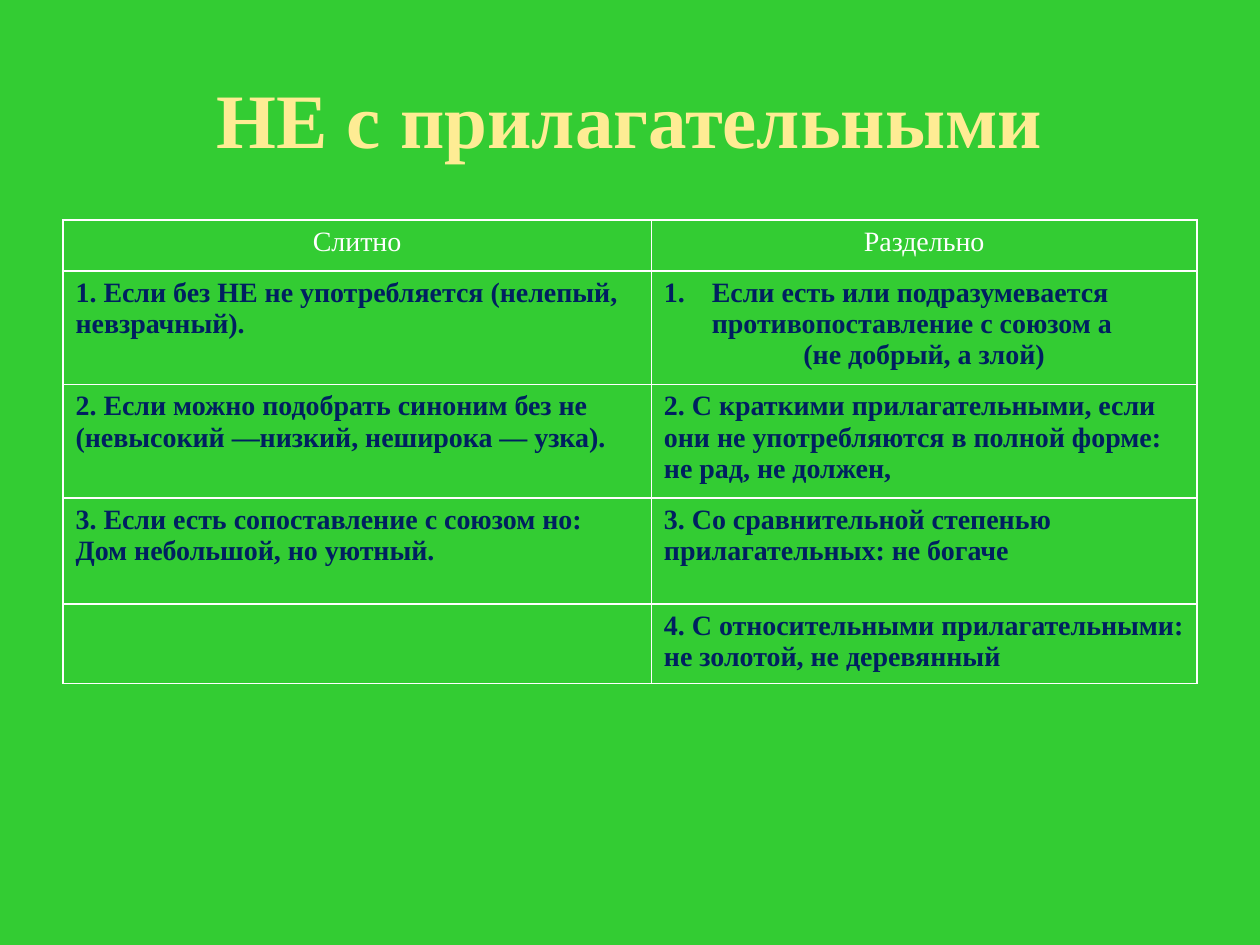
"""Builds a slide on writing НЕ with adjectives, joined or separate."""
import dataclasses

import pptx
import pptx.dml.color
import pptx.enum.text
import pptx.oxml
import pptx.oxml.ns
import pptx.util

ALIGN = pptx.enum.text.PP_ALIGN
COLUMN_SHARES = (0.467, 0.433)
ROW_SHARES = (0.054, 0.112, 0.112, 0.112, 0.079)
HEADINGS = ("Слитно", "Раздельно")
CONTRAST = {"left": 0.38, "hanging": -0.38}
RULES = (
    (
        [("1. Если без НЕ не употребляется (нелепый, невзрачный).", {})],
        [
            ("Если есть или подразумевается противопоставление с союзом а",
             {**CONTRAST, "numbered": True}),
            ("(не добрый, а злой)", {**CONTRAST, "align": ALIGN.CENTER}),
        ],
    ),
    (
        [("2. Если можно подобрать синоним без не (невысокий —низкий, неширока — узка).", {})],
        [("2. С краткими прилагательными, если они не употребляются в полной форме: "
          "не рад, не должен,", {})],
    ),
    (
        [
            ("3. Если есть сопоставление с союзом но:", {}),
            ("Дом небольшой, но уютный.", {}),
        ],
        [("3. Со сравнительной степенью прилагательных: не богаче", {})],
    ),
    (
        [],
        [("4. С относительными прилагательными: не золотой, не деревянный", {})],
    ),
)


@dataclasses.dataclass(frozen=True)
class Theme:
    font: str = "Times New Roman"
    background: str = "33CC33"
    title: str = "FEEC94"
    heading: str = "FFFFFF"
    rule: str = "002060"
    border: str = "FFFFFF"
    title_size: int = 44
    table_size: int = 16
    border_width: int = 1


class SlideBuilder:
    def __init__(self, deck, theme):
        self.theme = theme
        self.width, self.height = deck.slide_width, deck.slide_height
        self.slide = deck.slides.add_slide(deck.slide_layouts[6])
        backdrop = self.slide.background.fill
        backdrop.solid()
        backdrop.fore_color.rgb = pptx.dml.color.RGBColor.from_string(theme.background)

    def frame(self, left, top, width, height):
        return (round(left * self.width), round(top * self.height),
                round(width * self.width), round(height * self.height))

    def line(self, paragraph, words, size, color, bold, align=ALIGN.LEFT,
             left=0, hanging=0, numbered=False):
        paragraph.alignment = align
        run = paragraph.add_run()
        run.text = words
        style = {"name": self.theme.font, "size": pptx.util.Pt(size), "bold": bold}
        for key, value in style.items():
            setattr(run.font, key, value)
        run.font.color.rgb = pptx.dml.color.RGBColor.from_string(color)
        properties = paragraph._p.get_or_add_pPr()
        if left:
            properties.set("marL", str(pptx.util.Inches(left)))
            properties.set("indent", str(pptx.util.Inches(hanging)))
        if numbered:
            properties.append(pptx.oxml.parse_xml(
                f'<a:buAutoNum {pptx.oxml.ns.nsdecls("a")} type="arabicPeriod"/>'))

    def title(self, words, place):
        heading = self.slide.shapes.add_textbox(*self.frame(*place)).text_frame
        layout = {"word_wrap": True, "vertical_anchor": pptx.enum.text.MSO_ANCHOR.MIDDLE}
        for key, value in layout.items():
            setattr(heading, key, value)
        self.line(heading.paragraphs[0], words, self.theme.title_size,
                  self.theme.title, True, ALIGN.CENTER)

    def outline(self, cell):
        properties = cell._tc.get_or_add_tcPr()
        for side in ("lnL", "lnR", "lnT", "lnB"):
            properties.append(pptx.oxml.parse_xml(
                f'<a:{side} {pptx.oxml.ns.nsdecls("a")} '
                f'w="{pptx.util.Pt(self.theme.border_width)}"><a:solidFill>'
                f'<a:srgbClr val="{self.theme.border}"/></a:solidFill></a:{side}>'))
        cell.fill.background()

    def fill_cell(self, cell, lines, color, bold):
        self.outline(cell)
        for number, (words, options) in enumerate(lines):
            text = cell.text_frame
            paragraph = text.add_paragraph() if number else text.paragraphs[0]
            self.line(paragraph, words, self.theme.table_size, color, bold, **options)

    def table(self, headings, rules, left, top):
        place = self.frame(left, top, sum(COLUMN_SHARES), sum(ROW_SHARES))
        grid = self.slide.shapes.add_table(len(ROW_SHARES), len(COLUMN_SHARES), *place).table
        for key, value in {"first_row": False, "horz_banding": False}.items():
            setattr(grid, key, value)
        for column, share in zip(grid.columns, COLUMN_SHARES):
            column.width = round(share * self.width)
        for row, share in zip(grid.rows, ROW_SHARES):
            row.height = round(share * self.height)
        for column, words in enumerate(headings):
            self.fill_cell(grid.cell(0, column), [(words, {"align": ALIGN.CENTER})],
                           self.theme.heading, False)
        for row, pair in enumerate(rules, start=1):
            for column, lines in enumerate(pair):
                self.fill_cell(grid.cell(row, column), lines, self.theme.rule, True)


def main():
    deck = pptx.Presentation()
    deck.slide_width, deck.slide_height = pptx.util.Inches(10), pptx.util.Inches(7.5)
    builder = SlideBuilder(deck, Theme())
    builder.title("НЕ с прилагательными", (0.05, 0.04, 0.9, 0.17))
    builder.table(HEADINGS, RULES, left=0.05, top=0.233)
    deck.save("out.pptx")


if __name__ == "__main__":
    main()
